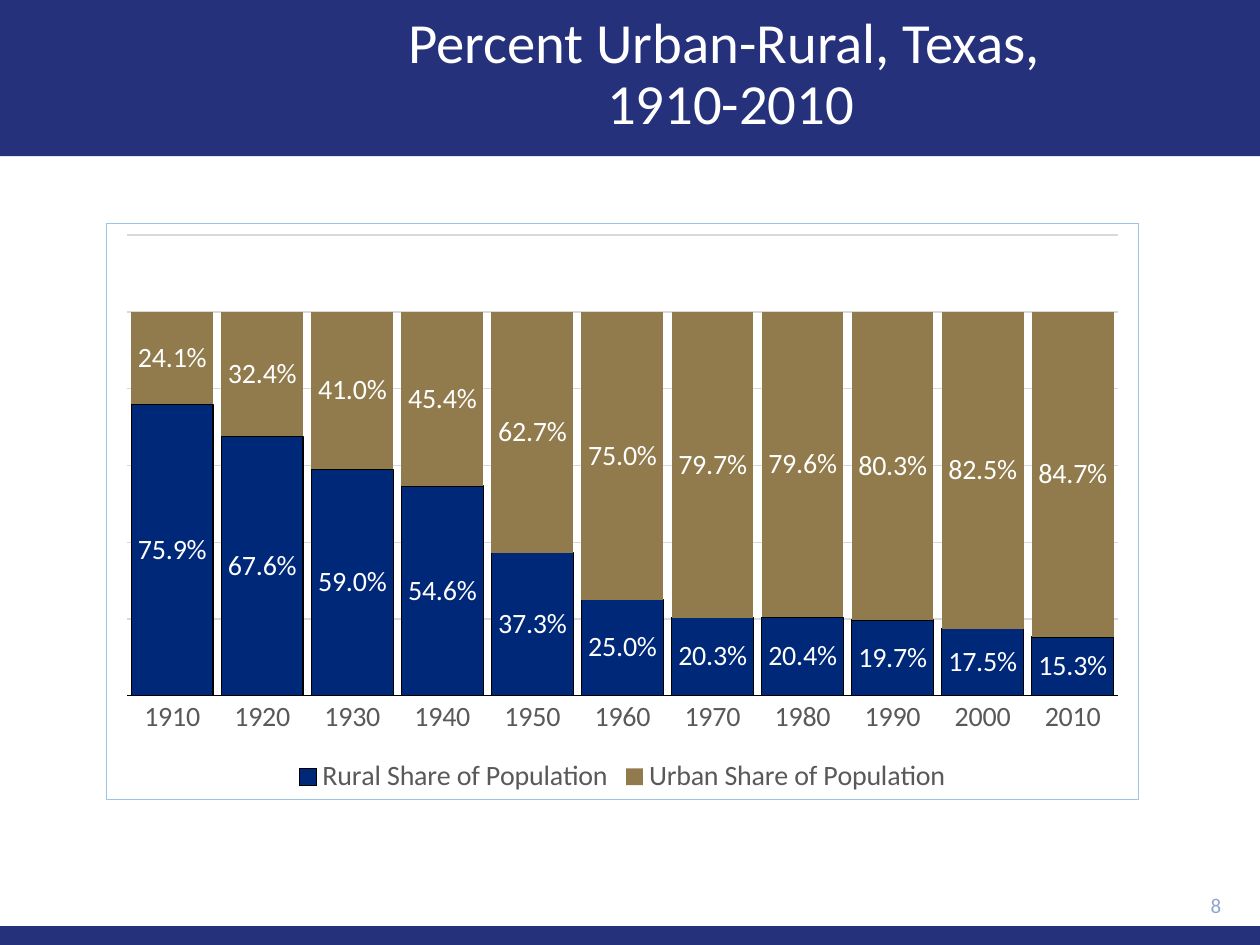
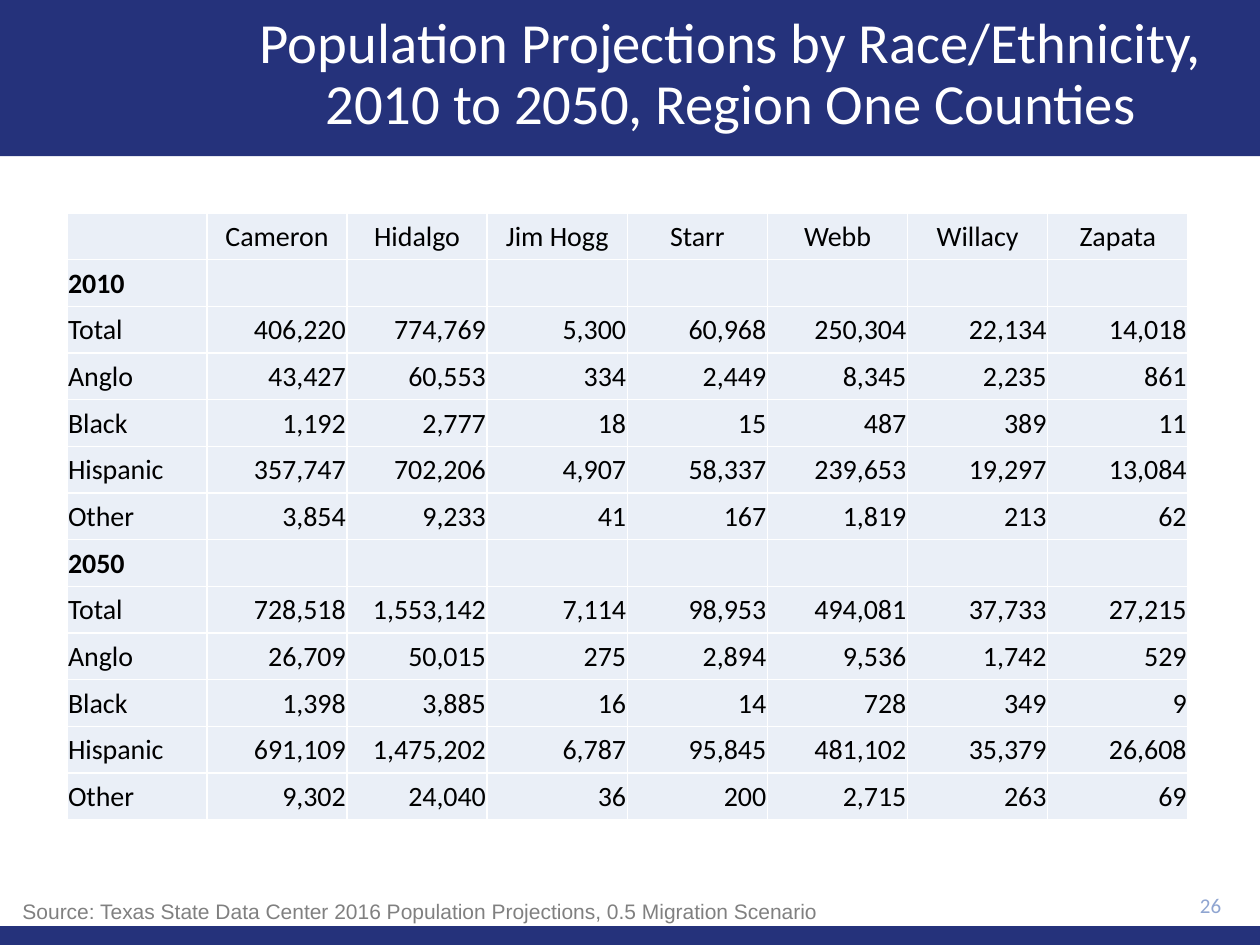
from lxml.etree import SubElement
from pptx import Presentation
from pptx.chart.data import CategoryChartData
from pptx.dml.color import RGBColor
from pptx.enum.chart import XL_CHART_TYPE as ChartType, XL_LEGEND_POSITION as LegendPosition
from pptx.enum.chart import XL_TICK_MARK as TickMark
from pptx.enum.shapes import MSO_SHAPE as Shape
from pptx.enum.text import MSO_ANCHOR as Anchor, PP_ALIGN as Align
from pptx.oxml import parse_xml
from pptx.oxml.ns import nsdecls, qn
from pptx.util import Inches, Pt

NAVY = RGBColor(0x25, 0x32, 0x7B)
WHITE = RGBColor(0xFF, 0xFF, 0xFF)
BLACK = RGBColor(0x00, 0x00, 0x00)
PAGE_BLUE = RGBColor(0x8F, 0xA5, 0xD1)
RURAL_BLUE = RGBColor(0x00, 0x28, 0x78)
URBAN_GOLD = RGBColor(0x91, 0x7B, 0x4C)
FRAME_BLUE = RGBColor(0x9D, 0xC3, 0xE6)
AXIS_GRAY = RGBColor(0x59, 0x59, 0x59)
GRID_GRAY = RGBColor(0xD9, 0xD9, 0xD9)
SOURCE_GRAY = RGBColor(0x80, 0x80, 0x80)
CELL_BLUE = RGBColor(0xEA, 0xEF, 0xF7)

YEARS = [str(year) for year in range(1910, 2011, 10)]
RURAL = [0.759, 0.676, 0.59, 0.546, 0.373, 0.25, 0.203, 0.204, 0.197, 0.175, 0.153]
URBAN = [0.241, 0.324, 0.41, 0.454, 0.627, 0.75, 0.797, 0.796, 0.803, 0.825, 0.847]

COUNTIES = ["Cameron", "Hidalgo", "Jim Hogg", "Starr", "Webb", "Willacy", "Zapata"]
GROUPS = ["Total", "Anglo", "Black", "Hispanic", "Other"]
PROJECTIONS = {
    "2010": [
        [406220, 774769, 5300, 60968, 250304, 22134, 14018],
        [43427, 60553, 334, 2449, 8345, 2235, 861],
        [1192, 2777, 18, 15, 487, 389, 11],
        [357747, 702206, 4907, 58337, 239653, 19297, 13084],
        [3854, 9233, 41, 167, 1819, 213, 62],
    ],
    "2050": [
        [728518, 1553142, 7114, 98953, 494081, 37733, 27215],
        [26709, 50015, 275, 2894, 9536, 1742, 529],
        [1398, 3885, 16, 14, 728, 349, 9],
        [691109, 1475202, 6787, 95845, 481102, 35379, 26608],
        [9302, 24040, 36, 200, 2715, 263, 69],
    ],
}


def style_font(font, size, color, name="Calibri", bold=False):
    font.name = name
    font.size = Pt(size)
    font.bold = bold
    font.color.rgb = color


def style_line(line, color, width=0.75):
    line.color.rgb = color
    line.width = Pt(width)


def add_band(slide, top, height):
    band = slide.shapes.add_shape(Shape.RECTANGLE, 0, Inches(top), Inches(10), Inches(height))
    band.shadow.inherit = False
    band.fill.solid()
    band.fill.fore_color.rgb = NAVY
    band.line.fill.background()


def add_text(slide, text, box, size, color, align=Align.LEFT, anchor=Anchor.MIDDLE, name="Calibri"):
    frame = slide.shapes.add_textbox(*map(Inches, box)).text_frame
    frame.word_wrap = True
    frame.vertical_anchor = anchor
    frame.text = text
    paragraph = frame.paragraphs[0]
    paragraph.alignment = align
    style_font(paragraph.font, size, color, name)
    return paragraph


def add_base_slide(presentation, title, number):
    slide = presentation.slides.add_slide(presentation.slide_layouts[6])
    add_band(slide, 0, 1.24)
    add_band(slide, 7.35, 0.15)
    heading = add_text(slide, title, (1.7, 0.1, 8.2, 1), 32.4, WHITE, Align.CENTER)
    heading.line_spacing = 0.9
    add_text(slide, str(number), (8.9, 7.01, 0.89, 0.34), 12, PAGE_BLUE, Align.RIGHT)
    return slide


def frame_chart(chart):
    frame = parse_xml(
        f'<c:spPr {nsdecls("c", "a")}><a:noFill/><a:ln w="{Pt(0.75)}"><a:solidFill>'
        f'<a:srgbClr val="{FRAME_BLUE}"/></a:solidFill></a:ln></c:spPr>'
    )
    chart.element.find(qn("c:chart")).addnext(frame)


def place_plot(chart, x, y, w, h):
    plot_area = chart.element.find(".//" + qn("c:plotArea"))
    for old in plot_area.findall(qn("c:layout")):
        plot_area.remove(old)
    layout = parse_xml(f'<c:layout {nsdecls("c")}><c:manualLayout/></c:layout>')
    settings = dict(layoutTarget="inner", xMode="edge", yMode="edge", x=x, y=y, w=w, h=h)
    for tag, value in settings.items():
        SubElement(layout[0], qn(f"c:{tag}")).set("val", str(value))
    plot_area.insert(0, layout)


def add_share_chart(slide, box):
    data = CategoryChartData(number_format="0.0%")
    data.categories = YEARS
    data.add_series("Rural Share of Population", RURAL)
    data.add_series("Urban Share of Population", URBAN)
    chart = slide.shapes.add_chart(ChartType.COLUMN_STACKED, *map(Inches, box), data).chart
    style_font(chart.font, 16, BLACK)
    chart.has_title = False
    chart.has_legend = True
    chart.legend.position = LegendPosition.BOTTOM
    chart.legend.include_in_layout = False
    style_font(chart.legend.font, 16, AXIS_GRAY)

    plot = chart.plots[0]
    plot.gap_width = 10
    plot.overlap = 100
    plot.vary_by_categories = False
    for series, color in zip(plot.series, (RURAL_BLUE, URBAN_GOLD)):
        series.format.fill.solid()
        series.format.fill.fore_color.rgb = color
        labels = series.data_labels
        labels.show_value = True
        labels.number_format = "0.0%"
        labels.number_format_is_linked = False
        style_font(labels.font, 16, WHITE)
    style_line(plot.series[0].format.line, BLACK)
    plot.series[1].format.line.fill.background()

    years = chart.category_axis
    years.major_tick_mark = TickMark.NONE
    style_font(years.tick_labels.font, 16, AXIS_GRAY)
    style_line(years.format.line, BLACK)
    shares = chart.value_axis
    shares.visible = False
    shares.minimum_scale = 0
    shares.maximum_scale = 1.2
    shares.major_unit = 0.2
    style_line(shares.major_gridlines.format.line, GRID_GRAY)
    place_plot(chart, 0.02, 0.02, 0.96, 0.8)
    frame_chart(chart)


def fill_cell(cell, text, align, bold):
    cell.margin_left = cell.margin_right = cell.margin_top = Inches(0.01)
    cell.margin_bottom = 0
    cell.vertical_anchor = Anchor.MIDDLE
    cell.text = text
    paragraph = cell.text_frame.paragraphs[0]
    paragraph.alignment = align
    style_font(paragraph.font, 16, BLACK, bold=bold)
    properties = cell._tc.get_or_add_tcPr()
    for side in ("lnL", "lnR", "lnT", "lnB"):
        properties.append(parse_xml(
            f'<a:{side} {nsdecls("a")} w="{Pt(1)}"><a:solidFill>'
            f'<a:srgbClr val="{WHITE}"/></a:solidFill></a:{side}>'
        ))
    cell.fill.solid()
    cell.fill.fore_color.rgb = CELL_BLUE


def add_projection_table(slide, box):
    rows = [["", *COUNTIES]]
    for year, counts in PROJECTIONS.items():
        rows.append([year] + [""] * len(COUNTIES))
        rows += [[group, *(f"{n:,}" for n in values)] for group, values in zip(GROUPS, counts)]
    table = slide.shapes.add_table(len(rows), len(rows[0]), *map(Inches, box)).table
    table.first_row = table.horz_banding = False
    for row_index, row in enumerate(rows):
        for column_index, text in enumerate(row):
            if row_index == 0:
                align = Align.CENTER
            else:
                align = Align.RIGHT if column_index else Align.LEFT
            fill_cell(table.cell(row_index, column_index), text, align, text in PROJECTIONS)


def main():
    presentation = Presentation()
    presentation.slide_width = Inches(10)
    presentation.slide_height = Inches(7.5)

    urban_rural = add_base_slide(presentation, "Percent Urban-Rural, Texas, \v1910-2010", 8)
    add_share_chart(urban_rural, (0.84, 1.77, 8.2, 4.58))

    projections = add_base_slide(
        presentation,
        "Population Projections by Race/Ethnicity, 2010 to 2050, Region One Counties",
        26,
    )
    add_projection_table(projections, (0.53, 1.69, 8.9, 4.82))
    add_text(
        projections,
        "Source: Texas State Data Center 2016 Population Projections, 0.5 Migration Scenario",
        (0.08, 7.08, 9.58, 0.3), 12, SOURCE_GRAY, anchor=Anchor.TOP, name="Arial",
    )
    presentation.save("out.pptx")


if __name__ == "__main__":
    main()
